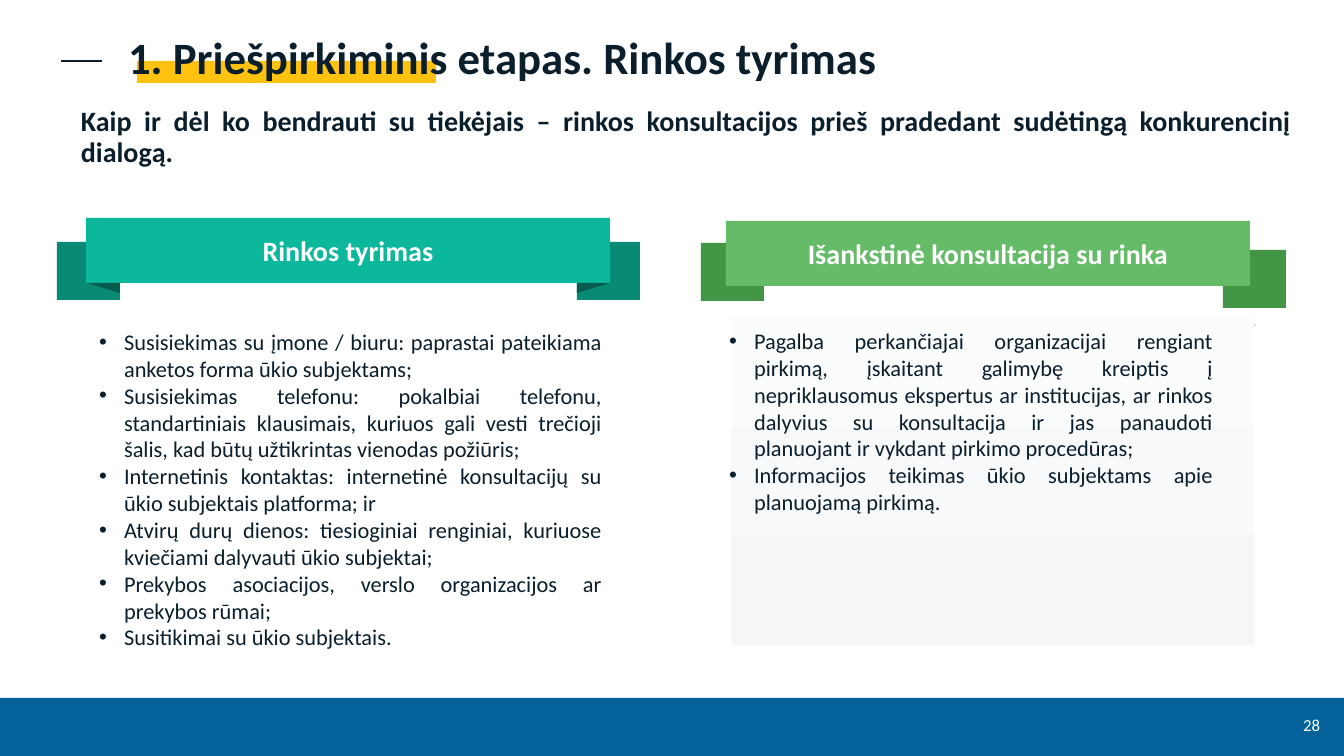
from dataclasses import dataclass

from lxml.etree import SubElement
from pptx import Presentation
from pptx.dml.color import RGBColor
from pptx.enum.shapes import MSO_CONNECTOR, MSO_SHAPE
from pptx.enum.text import MSO_ANCHOR, MSO_AUTO_SIZE, PP_ALIGN
from pptx.oxml.ns import qn
from pptx.util import Emu, Pt

EMU_PER_PX = 914400 / 100.8


@dataclass(frozen=True)
class Theme:
    """Colours, type sizes and font of the slide."""
    font: str = "Calibri"
    ink: str = "0B1E2C"
    white: str = "FFFFFF"
    footer: str = "04619A"
    accent: str = "FFC20E"
    teal: tuple = ("0BB89C", "088A75", "065C4E")
    green: tuple = ("66BB69", "439646", "2C642E")
    panel: tuple = ("F4F6F7", "FBFCFC")
    title_size: int = 32
    heading_size: int = 20
    body_size: int = 16
    number_size: int = 12


THEME = Theme()

MARKET_RESEARCH = [
    "Susisiekimas su įmone / biuru: paprastai pateikiama anketos forma ūkio subjektams;",
    "Susisiekimas telefonu: pokalbiai telefonu, standartiniais klausimais, kuriuos gali "
    "vesti trečioji šalis, kad būtų užtikrintas vienodas požiūris;",
    "Internetinis kontaktas: internetinė konsultacijų su ūkio subjektais platforma; ir",
    "Atvirų durų dienos: tiesioginiai renginiai, kuriuose kviečiami dalyvauti ūkio subjektai;",
    "Prekybos asociacijos, verslo organizacijos ar prekybos rūmai;",
    "Susitikimai su ūkio subjektais.",
]
CONSULTATION = [
    "Pagalba perkančiajai organizacijai rengiant pirkimą, įskaitant galimybę kreiptis į "
    "nepriklausomus ekspertus ar institucijas, ar rinkos dalyvius su konsultacija ir jas "
    "panaudoti planuojant ir vykdant pirkimo procedūras;",
    "Informacijos teikimas ūkio subjektams apie planuojamą pirkimą.",
]


def px(length):
    """Turn pixels into EMU."""
    return Emu(round(length * EMU_PER_PX))


def rgb(colour):
    """Turn a hex string into a colour."""
    return RGBColor.from_string(colour)


def paint(shape, colour):
    """Give a shape a plain fill without line or shadow."""
    shape.shadow.inherit = False
    shape.fill.solid()
    shape.fill.fore_color.rgb = rgb(colour)
    shape.line.fill.background()


def add_block(shapes, box, colour):
    """Add a filled rectangle."""
    block = shapes.add_shape(MSO_SHAPE.RECTANGLE, *map(px, box))
    paint(block, colour)
    return block


def add_fold(shapes, corners, colour):
    """Add the small triangle of a folded ribbon."""
    outline = shapes.build_freeform(*corners[0], scale=EMU_PER_PX)
    outline.add_line_segments(corners[1:], close=True)
    paint(outline.convert_to_shape(), colour)


def write(paragraph, text, size, colour=THEME.ink, bold=False, align=PP_ALIGN.LEFT, spacing=1.0):
    """Write one formatted run into a paragraph."""
    paragraph.alignment = align
    paragraph.line_spacing = spacing
    paragraph.space_before = Pt(0)
    run = paragraph.add_run()
    run.text = text
    run.font.name = THEME.font
    run.font.size = Pt(size)
    run.font.bold = bold
    run.font.color.rgb = rgb(colour)


def set_frame(shape, anchor=MSO_ANCHOR.MIDDLE):
    """Wrap and anchor the text of a shape and return its frame."""
    frame = shape.text_frame
    frame.word_wrap = True
    frame.auto_size = MSO_AUTO_SIZE.NONE
    frame.vertical_anchor = anchor
    return frame


def add_text(shapes, box, text, size, **style):
    """Add a text box with one paragraph."""
    frame = set_frame(shapes.add_textbox(*map(px, box)))
    write(frame.paragraphs[0], text, size, **style)


def place(slide, placeholder, box):
    """Move a placeholder to its box, in front of the shapes so far."""
    placeholder.left, placeholder.top, placeholder.width, placeholder.height = map(px, box)
    slide.shapes.element.append(placeholder.element)


def add_bullet(paragraph):
    """Give a paragraph a hanging round bullet."""
    properties = paragraph._p.get_or_add_pPr()
    properties.set("marL", str(px(25)))
    properties.set("indent", str(-px(25)))
    SubElement(properties, qn("a:buFont")).set("typeface", "Arial")
    SubElement(properties, qn("a:buChar")).set("char", "•")


def fill_list(slide, placeholder, box, items):
    """Place a body placeholder and write its bulleted items."""
    place(slide, placeholder, box)
    frame = set_frame(placeholder, MSO_ANCHOR.TOP)
    for index, item in enumerate(items):
        paragraph = frame.add_paragraph() if index else frame.paragraphs[0]
        add_bullet(paragraph)
        write(paragraph, item, THEME.body_size, align=PP_ALIGN.JUSTIFY)


def add_ribbon(slide, heading, origin, tails, folds, colours):
    """Add a grouped ribbon: two tails, a headed band and its folds."""
    band_colour, tail_colour, fold_colour = colours
    ribbon = slide.shapes.add_group_shape().shapes
    for tail in tails:
        add_block(ribbon, (*tail, 63, 58), tail_colour)
    band = add_block(ribbon, (*origin, 524, 65), band_colour)
    write(set_frame(band).paragraphs[0], heading, THEME.heading_size,
          colour=THEME.white, bold=True, align=PP_ALIGN.CENTER)
    for outer, inner, top in folds:
        add_fold(ribbon, [(outer, top), (inner, top), (inner, top + 10)], fold_colour)


def add_dash(slide, left, right, y):
    """Add the short line before the title."""
    dash = slide.shapes.add_connector(MSO_CONNECTOR.STRAIGHT, px(left), px(y), px(right), px(y))
    dash.line.color.rgb = rgb(THEME.ink)
    dash.line.width = Pt(2)
    SubElement(dash.element.spPr, qn("a:effectLst"))


def add_panel(slide, box):
    """Add the pale gradient panel behind the right list."""
    panel = add_block(slide.shapes, box, THEME.panel[0])
    panel.fill.gradient()
    panel.fill.gradient_angle = 90
    for stop, colour in zip(panel.fill.gradient_stops, THEME.panel):
        stop.color.rgb = rgb(colour)


def main():
    """Build the slide and save it."""
    deck = Presentation()
    deck.slide_width, deck.slide_height = px(1344), px(756)
    slide = deck.slides.add_slide(deck.slide_layouts[3])
    title, research_list, consultation_list = slide.placeholders

    add_block(slide.shapes, (0, 698, 1344, 58), THEME.footer)
    add_dash(slide, 61, 102, 61)
    add_block(slide.shapes, (137, 61, 299, 22), THEME.accent)
    place(slide, title, (118, 44, 1056, 31))
    write(set_frame(title).paragraphs[0], "1. Priešpirkiminis etapas. Rinkos tyrimas",
          THEME.title_size, bold=True, spacing=0.9)
    add_text(slide.shapes, (1289, 705, 41, 40), "28", THEME.number_size,
             colour=THEME.white, align=PP_ALIGN.RIGHT)
    add_text(slide.shapes, (71, 96, 1230, 84),
             "Kaip ir dėl ko bendrauti su tiekėjais – rinkos konsultacijos prieš pradedant "
             "sudėtingą konkurencinį dialogą.",
             THEME.heading_size, bold=True, align=PP_ALIGN.JUSTIFY, spacing=0.9)

    add_ribbon(slide, "Rinkos tyrimas", (86, 218), [(57, 242), (577, 242)],
               [(87, 120, 283), (610, 577, 283)], THEME.teal)
    add_ribbon(slide, "Išankstinė konsultacija su rinka", (726, 221), [(701, 243), (1223, 250)],
               [(1256, 1223, 325)], THEME.green)
    fill_list(slide, research_list, (89, 323, 523, 336), MARKET_RESEARCH)
    add_panel(slide, (731, 316, 523, 329))
    fill_list(slide, consultation_list, (719, 322, 504, 201), CONSULTATION)
    deck.save("out.pptx")


if __name__ == "__main__":
    main()
